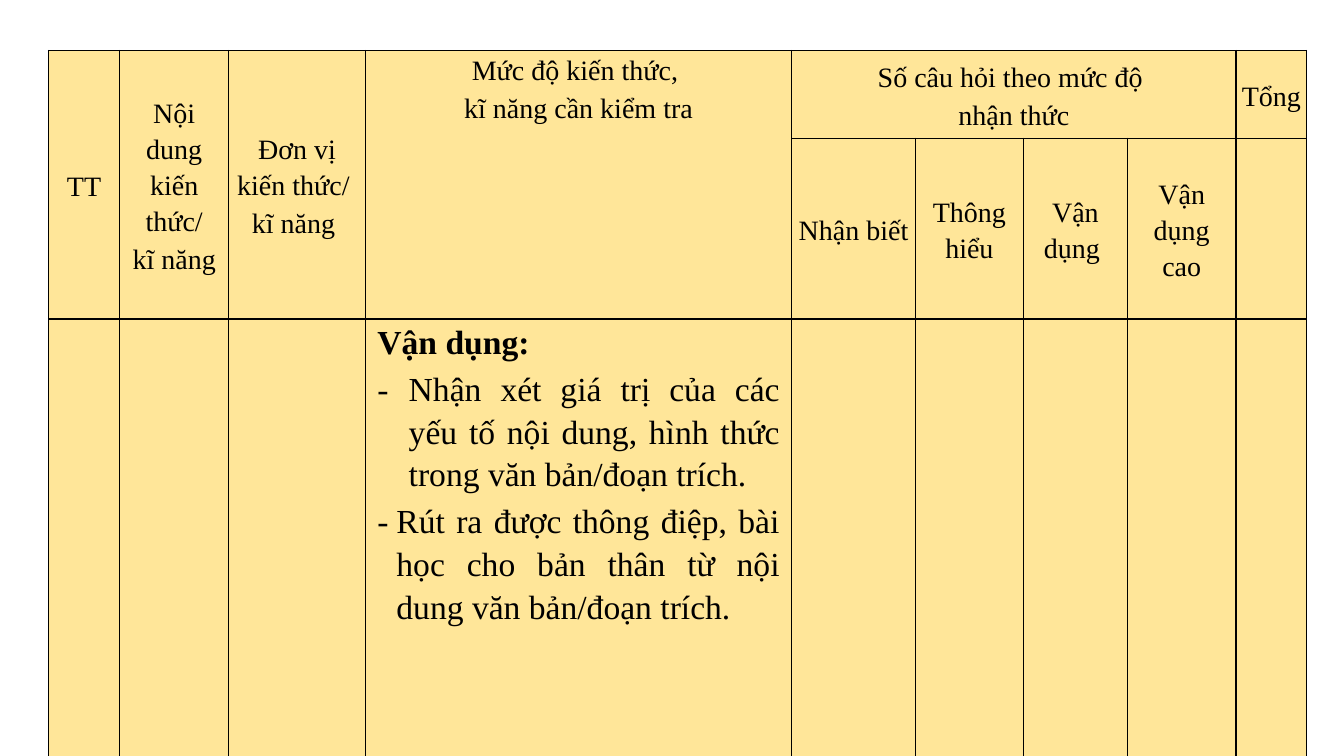
from lxml.etree import SubElement
from pptx import Presentation
from pptx.dml.color import RGBColor
from pptx.enum.text import MSO_ANCHOR, PP_ALIGN
from pptx.oxml import parse_xml
from pptx.oxml.ns import nsdecls, qn
from pptx.util import Cm, Pt

BLACK = RGBColor(0x00, 0x00, 0x00)
SAND = RGBColor(0xFF, 0xE6, 0x99)
FONT = "Times New Roman"

COLUMN_WIDTHS = [1.8, 2.74, 3.45, 10.74, 3.12, 2.72, 2.62, 2.74, 1.78]
ROW_HEIGHTS = [2.21, 3.23, 12.04]

# Header texts by (row, column)
HEADERS = {
    (0, 0): "TT",
    (0, 1): "Nội dung kiến thức/\nkĩ năng",
    (0, 2): "Đơn vị kiến thức/ \nkĩ năng ",
    (0, 3): "Mức độ kiến thức, \nkĩ năng cần kiểm tra",
    (0, 4): "Số câu hỏi theo mức độ \nnhận thức",
    (0, 8): "Tổng",
    (1, 4): "Nhận biết",
    (1, 5): "Thông hiểu",
    (1, 6): "Vận dụng ",
    (1, 7): "Vận dụng cao",
}
# Skill paragraphs: text, hanging indent in cm (0 is the heading)
SKILLS = [
    ("Vận dụng:", 0),
    ("Nhận xét giá trị của các yếu tố nội dung, hình thức trong văn bản/đoạn trích.", 0.79),
    ("Rút ra được thông điệp, bài học cho bản thân từ nội dung văn bản/đoạn trích.", 0.48),
]


def frame_cell(cell):
    """Fill a cell and draw a thin black line on its four sides."""
    cell.fill.solid()
    cell.fill.fore_color.rgb = SAND
    properties = cell._tc.get_or_add_tcPr()
    for position, side in enumerate(("lnL", "lnR", "lnT", "lnB")):
        properties.insert(position, parse_xml(
            f'<a:{side} {nsdecls("a")} w="12700"><a:solidFill>'
            f'<a:srgbClr val="{BLACK}"/></a:solidFill></a:{side}>'))


def format_paragraph(paragraph, alignment, size, before, after, bold=False):
    paragraph.alignment = alignment
    paragraph.line_spacing = 1.15
    paragraph.space_before = Pt(before)
    paragraph.space_after = Pt(after)
    for run in paragraph.runs:
        run.font.name = FONT
        run.font.size = Pt(size)
        run.font.bold = bold
        run.font.color.rgb = BLACK


presentation = Presentation()
presentation.slide_width = Cm(33.87)
presentation.slide_height = Cm(19.05)
slide = presentation.slides.add_slide(presentation.slide_layouts[6])

# Table grid
table = slide.shapes.add_table(
    len(ROW_HEIGHTS), len(COLUMN_WIDTHS), Cm(1.22), Cm(1.27),
    Cm(sum(COLUMN_WIDTHS)), Cm(sum(ROW_HEIGHTS))).table
for column, width in zip(table.columns, COLUMN_WIDTHS):
    column.width = Cm(width)
for row, height in zip(table.rows, ROW_HEIGHTS):
    row.height = Cm(height)
for cell in table.iter_cells():
    frame_cell(cell)

# Merged header cells
for column_index in range(4):
    table.cell(0, column_index).merge(table.cell(1, column_index))
table.cell(0, 4).merge(table.cell(0, 7))

# Header texts
for (row_index, column_index), text in HEADERS.items():
    cell = table.cell(row_index, column_index)
    cell.margin_left = cell.margin_right = Cm(0.13)
    cell.margin_top = cell.margin_bottom = 0
    cell.vertical_anchor = MSO_ANCHOR.MIDDLE
    cell.text_frame.text = text
    for paragraph in cell.text_frame.paragraphs:
        format_paragraph(paragraph, PP_ALIGN.CENTER, 20, 0.8, 0.8)
table.cell(0, 3).vertical_anchor = MSO_ANCHOR.TOP

# Skills to be tested
skills_cell = table.cell(2, 3)
skills_cell.margin_left = skills_cell.margin_right = Cm(0.3)
skills_cell.margin_top = skills_cell.margin_bottom = 0
skills_cell.text_frame.text = "\n".join(text for text, indent in SKILLS)
for paragraph, (text, indent) in zip(skills_cell.text_frame.paragraphs, SKILLS):
    format_paragraph(paragraph, PP_ALIGN.JUSTIFY, 24, 2, 1, bold=not indent)
    if indent:
        properties = paragraph._p.get_or_add_pPr()
        properties.set("marL", str(Cm(indent)))
        properties.set("indent", str(-Cm(indent)))
        SubElement(properties, qn("a:buFont"), typeface=FONT)
        SubElement(properties, qn("a:buChar"), char="-")

presentation.save("out.pptx")
